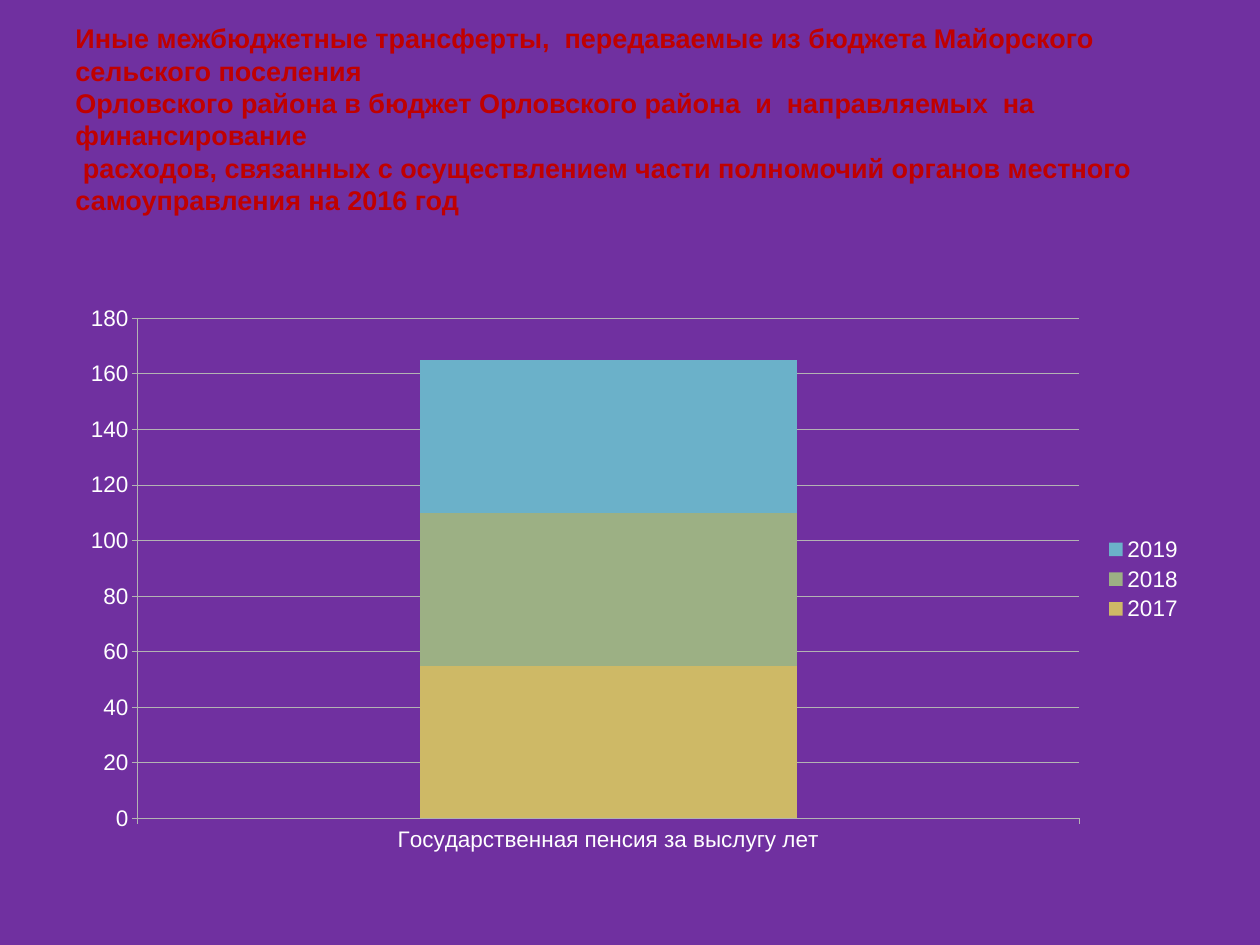
from dataclasses import dataclass

from pptx import Presentation
from pptx.chart.data import CategoryChartData
from pptx.dml.color import RGBColor as Rgb
from pptx.enum.chart import XL_CHART_TYPE as ChartType
from pptx.enum.chart import XL_LEGEND_POSITION as LegendPosition
from pptx.enum.chart import XL_TICK_MARK as TickMark
from pptx.enum.text import MSO_ANCHOR as Anchor
from pptx.slide import Slide
from pptx.util import Pt


@dataclass(frozen=True)
class Theme:
    font: str = "Arial"
    background: Rgb = Rgb(0x70, 0x30, 0xA0)
    title: Rgb = Rgb(0xC0, 0x00, 0x00)
    label: Rgb = Rgb(0xFF, 0xFF, 0xFF)
    line: Rgb = Rgb(0xB3, 0xB3, 0xB3)
    title_size: float = 21.6
    title_leading: float = 25.92
    label_size: float = 18


@dataclass(frozen=True)
class Frame:
    left: float
    top: float
    width: float
    height: float

    def lengths(self) -> tuple[Pt, Pt, Pt, Pt]:
        return Pt(self.left), Pt(self.top), Pt(self.width), Pt(self.height)


@dataclass(frozen=True)
class YearSeries:
    year: str
    amount: float
    color: Rgb


THEME = Theme()
TITLE_FRAME = Frame(50.4, 30.24, 907.2, 173.52)
CHART_FRAME = Frame(54.72, 235.44, 899.28, 455.76)
TITLE = "\v".join([
    "Иные межбюджетные трансферты,  передаваемые из бюджета Майорского сельского поселения",
    "Орловского района в бюджет Орловского района  и  направляемых  на  финансирование",
    " расходов, связанных с осуществлением части полномочий органов местного самоуправления на 2016 год",
])
CATEGORY = "Государственная пенсия за выслугу лет"
YEARS = [
    YearSeries("2017", 55, Rgb(0xCE, 0xB9, 0x66)),
    YearSeries("2018", 55, Rgb(0x9C, 0xB0, 0x84)),
    YearSeries("2019", 55, Rgb(0x6B, 0xB1, 0xC9)),
]


def add_title(slide: Slide, text: str, frame: Frame) -> None:
    box = slide.shapes.add_textbox(*frame.lengths())
    text_frame = box.text_frame
    text_frame.word_wrap = True
    text_frame.vertical_anchor = Anchor.BOTTOM
    text_frame.margin_left = text_frame.margin_right = Pt(10)
    text_frame.margin_top, text_frame.margin_bottom = Pt(5), Pt(31)
    para = text_frame.paragraphs[0]
    para.text = text
    para.line_spacing = Pt(THEME.title_leading)
    for span in para.runs:
        span.font.name = THEME.font
        span.font.size = Pt(THEME.title_size)
        span.font.bold = True
        span.font.color.rgb = THEME.title


def add_stacked_chart(slide: Slide, years: list[YearSeries], frame: Frame) -> None:
    chart_data = CategoryChartData()
    chart_data.categories = [CATEGORY]
    for entry in years:
        chart_data.add_series(entry.year, [entry.amount])
    chart = slide.shapes.add_chart(
        ChartType.COLUMN_STACKED, *frame.lengths(), chart_data
    ).chart
    chart.has_title = False
    chart.font.name = THEME.font
    chart.font.size = Pt(THEME.label_size)
    chart.font.color.rgb = THEME.label

    chart.has_legend = True
    chart.legend.position = LegendPosition.RIGHT
    chart.legend.include_in_layout = False

    plot = chart.plots[0]
    plot.gap_width, plot.overlap = 150, 100
    plot.vary_by_categories = False
    for series, entry in zip(plot.series, years):
        series.format.fill.solid()
        series.format.fill.fore_color.rgb = entry.color

    amounts = chart.value_axis
    amounts.minimum_scale, amounts.maximum_scale, amounts.major_unit = 0, 180, 20
    amounts.has_major_gridlines = True
    amounts.major_gridlines.format.line.color.rgb = THEME.line
    for axis in (chart.category_axis, amounts):
        axis.major_tick_mark = TickMark.OUTSIDE
        axis.minor_tick_mark = TickMark.NONE
        axis.format.line.color.rgb = THEME.line


def main() -> None:
    """Build the slide on intergovernmental transfers and save it."""
    deck = Presentation()
    deck.slide_width, deck.slide_height = Pt(1008), Pt(756)
    page = deck.slides.add_slide(deck.slide_layouts[6])
    page.background.fill.solid()
    page.background.fill.fore_color.rgb = THEME.background
    add_title(page, TITLE, TITLE_FRAME)
    add_stacked_chart(page, YEARS, CHART_FRAME)
    deck.save("out.pptx")


if __name__ == "__main__":
    main()
